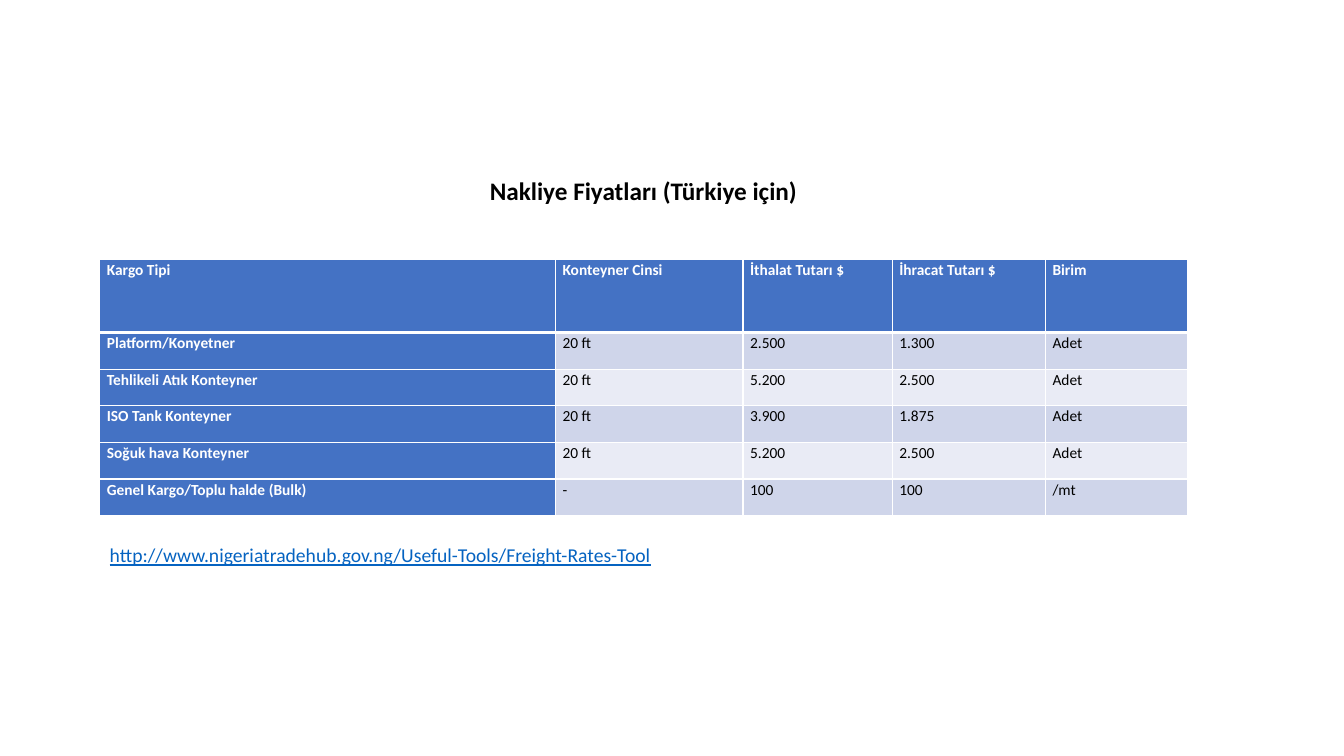
import pptx
import pptx.dml.color
import pptx.enum.text
import pptx.oxml
import pptx.oxml.ns
import pptx.util

TITLE = "Nakliye Fiyatları (Türkiye için)"
ADDRESS = "http://www.nigeriatradehub.gov.ng/Useful-Tools/Freight-Rates-Tool"
RATES = [
    ("Kargo Tipi", "Konteyner Cinsi", "İthalat Tutarı $", "İhracat Tutarı $", "Birim"),
    ("Platform/Konyetner", "20 ft", "2.500", "1.300", "Adet"),
    ("Tehlikeli Atık Konteyner", "20 ft", "5.200", "2.500", "Adet"),
    ("ISO Tank Konteyner", "20 ft", "3.900", "1.875", "Adet"),
    ("Soğuk hava Konteyner", "20 ft", "5.200", "2.500", "Adet"),
    ("Genel Kargo/Toplu halde (Bulk)", "-", "100", "100", "/mt"),
]
COLUMN_WIDTHS = (4.52, 1.86, 1.48, 1.52, 1.41)
HEADER_HEIGHT, ROW_HEIGHT = 0.73, 0.363
LEFT, TABLE_TOP = 0.99, 2.57
FONT = "Calibri"
WHITE, BLACK, BLUE, LINK = "FFFFFF", "000000", "4472C4", "0563C1"
BANDS = ("E9EBF5", "CFD5EA")

inches = pptx.util.Inches


def color(code):
    return pptx.dml.color.RGBColor.from_string(code)


def style(paragraph, size, code, bold=False, underline=None):
    font = paragraph.font
    font.name, font.size = FONT, pptx.util.Pt(size)
    font.bold, font.underline = bold, underline
    font.color.rgb = color(code)


def add_text(slide, text, area, wrap, **look):
    box = slide.shapes.add_textbox(*map(inches, area))
    frame = box.text_frame
    frame.word_wrap = wrap
    frame.auto_size = pptx.enum.text.MSO_AUTO_SIZE.SHAPE_TO_FIT_TEXT
    frame.text = text
    style(frame.paragraphs[0], **look)


def add_borders(cell, row):
    """White edges, with a thick one between the header and the first row."""
    widths = {"L": 1, "R": 1, "T": 3 if row == 1 else 1, "B": 3 if row == 0 else 1}
    properties = cell._tc.get_or_add_tcPr()
    for side, width in widths.items():
        properties.append(pptx.oxml.parse_xml(
            f'<a:ln{side} {pptx.oxml.ns.nsdecls("a")} w="{pptx.util.Pt(width)}">'
            f'<a:solidFill><a:srgbClr val="{WHITE}"/></a:solidFill></a:ln{side}>'))


def add_rates(slide):
    heights = [HEADER_HEIGHT] + [ROW_HEIGHT] * (len(RATES) - 1)
    area = (LEFT, TABLE_TOP, sum(COLUMN_WIDTHS), sum(heights))
    table = slide.shapes.add_table(
        len(RATES), len(COLUMN_WIDTHS), *map(inches, area)).table
    table.first_col = True
    for column, width in zip(table.columns, COLUMN_WIDTHS):
        column.width = inches(width)
    for row, (texts, height) in enumerate(zip(RATES, heights)):
        table.rows[row].height = inches(height)
        for column, text in enumerate(texts):
            cell = table.cell(row, column)
            heading = row == 0 or column == 0
            cell.margin_left = cell.margin_right = inches(0.07)
            cell.margin_top = cell.margin_bottom = 0
            add_borders(cell, row)
            cell.fill.solid()
            cell.fill.fore_color.rgb = color(BLUE if heading else BANDS[row % 2])
            cell.text = text
            paragraph = cell.text_frame.paragraphs[0]
            paragraph.line_spacing = 1.07
            style(paragraph, 11, WHITE if heading else BLACK, bold=heading)


def main():
    deck = pptx.Presentation()
    deck.slide_width, deck.slide_height = inches(13.33), inches(7.5)
    slide = deck.slides.add_slide(deck.slide_layouts[6])
    add_rates(slide)
    add_text(slide, TITLE, (4.76, 1.69, 3.27, 0.4), wrap=False,
             size=18, code=BLACK, bold=True)
    add_text(slide, ADDRESS, (LEFT, 5.34, 6.67, 0.34), wrap=True,
             size=14, code=LINK, underline=True)
    deck.save("out.pptx")


if __name__ == "__main__":
    main()
